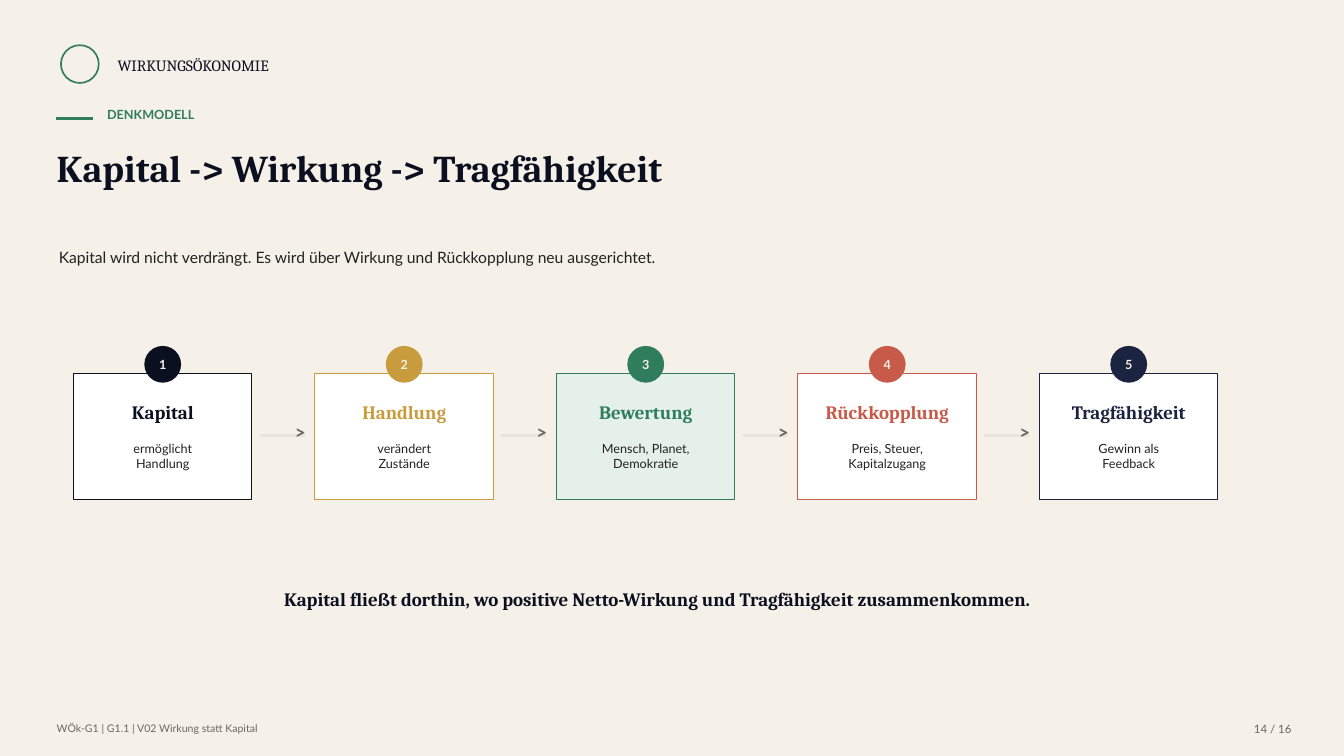
"""Build the slide "Kapital -> Wirkung -> Tragfähigkeit" and save it."""
from pptx import Presentation
from pptx.dml.color import RGBColor
from pptx.enum.shapes import MSO_SHAPE as Shape
from pptx.enum.text import MSO_ANCHOR as Anchor, MSO_AUTO_SIZE as AutoSize, PP_ALIGN as Align
from pptx.util import Pt

PX = 9525
SERIF, SANS = "Cambria", "Lato"
CREAM = RGBColor(0xF6, 0xF1, 0xE8)
WHITE = RGBColor(0xFF, 0xFF, 0xFF)
INK = RGBColor(0x0B, 0x10, 0x20)
NAVY = RGBColor(0x1A, 0x24, 0x40)
GOLD = RGBColor(0xC8, 0x9B, 0x3C)
GREEN = RGBColor(0x2F, 0x7D, 0x5C)
MINT = RGBColor(0xE5, 0xF0, 0xEA)
RED = RGBColor(0xC8, 0x5A, 0x4A)
TEXT = RGBColor(0x22, 0x22, 0x22)
MUTED = RGBColor(0x6C, 0x65, 0x5B)
RULE = RGBColor(0xE8, 0xE4, 0xDC)

TITLE = "Kapital -> Wirkung -> Tragfähigkeit"
LABELS = [
    ("WIRKUNGSÖKONOMIE", (112, 53, 250, 22), dict(size=11.2, font=SERIF, color=INK)),
    ("DENKMODELL", (102, 102, 420, 24), dict(size=9, color=GREEN, bold=True)),
    ("Kapital wird nicht verdrängt. Es wird über Wirkung und Rückkopplung neu ausgerichtet.",
     (56, 236, 820, 44), dict(size=11.2)),
    ("Kapital fließt dorthin, wo positive Netto-Wirkung und Tragfähigkeit zusammenkommen.",
     (246, 560, 760, 42),
     dict(size=13.5, font=SERIF, color=INK, bold=True, align=Align.CENTER)),
    ("WÖk-G1 | G1.1 | V02 Wirkung statt Kapital", (54, 688, 560, 18),
     dict(size=7.5, color=MUTED)),
    ("14 / 16", (1160, 688, 70, 18), dict(size=8.2, color=MUTED, align=Align.RIGHT)),
]
STEPS = [
    ("Kapital", "ermöglicht\nHandlung", INK, WHITE),
    ("Handlung", "verändert\nZustände", GOLD, WHITE),
    ("Bewertung", "Mensch, Planet,\nDemokratie", GREEN, MINT),
    ("Rückkopplung", "Preis, Steuer,\nKapitalzugang", RED, WHITE),
    ("Tragfähigkeit", "Gewinn als\nFeedback", NAVY, WHITE),
]
LEFT, TOP, CARD_W, CARD_H, STEP = 70, 356, 170, 120, 230
BADGE = 34


def emu(box):
    return [v * PX for v in box]


def write(sp, text, size=9, font=SANS, color=TEXT, bold=False, align=Align.LEFT,
          anchor=Anchor.TOP):
    tf = sp.text_frame
    tf.text = text
    tf.word_wrap = True
    tf.auto_size = AutoSize.NONE
    tf.vertical_anchor = anchor
    tf.margin_left = tf.margin_right = tf.margin_top = tf.margin_bottom = 0
    for p in tf.paragraphs:
        p.alignment = align
        for r in p.runs:
            r.font.size, r.font.name, r.font.bold = Pt(size), font, bold
            r.font.color.rgb = color


def label(s, text, box, **style):
    write(s.shapes.add_textbox(*emu(box)), text, **style)


def shape(s, kind, box, fill, line, width=0.75):
    sp = s.shapes.add_shape(kind, *emu(box))
    sp.shadow.inherit = False
    if fill is None:
        sp.fill.background()
    else:
        sp.fill.solid()
        sp.fill.fore_color.rgb = fill
    sp.line.color.rgb = line
    sp.line.width = Pt(width)
    return sp


def step_card(s, i, name, detail, color, fill):
    x = LEFT + i * STEP
    shape(s, Shape.RECTANGLE, (x, TOP, CARD_W, CARD_H), fill, color)
    badge = shape(s, Shape.OVAL, (x + (CARD_W - BADGE) // 2, TOP - 26, BADGE, BADGE),
                  color, color)
    write(badge, str(i + 1), color=CREAM, bold=True, align=Align.CENTER,
          anchor=Anchor.MIDDLE)
    label(s, name, (x + 14, TOP + 26, CARD_W - 28, 22), size=13.5, font=SERIF,
          color=color, bold=True, align=Align.CENTER)
    label(s, detail, (x + 18, TOP + 64, CARD_W - 36, 34), align=Align.CENTER)
    if i < len(STEPS) - 1:
        shape(s, Shape.RECTANGLE, (x + CARD_W + 8, TOP + 58, 42, 2), RULE, RULE, 0)
        label(s, ">", (x + CARD_W + 34, TOP + 45, 24, 24), size=13.5, color=MUTED,
              bold=True, align=Align.CENTER)


def main():
    prs = Presentation()
    prs.slide_width, prs.slide_height = emu((1280, 720))
    s = prs.slides.add_slide(prs.slide_layouts[5])
    s.background.fill.solid()
    s.background.fill.fore_color.rgb = CREAM

    title = s.shapes.title
    title.left, title.top, title.width, title.height = emu((54, 138, 920, 88))
    write(title, TITLE, size=27, font=SERIF, color=INK, bold=True)

    shape(s, Shape.OVAL, (58, 43, 36, 36), None, GREEN, 1.2)
    shape(s, Shape.RECTANGLE, (54, 112, 34, 2), GREEN, GREEN, 0)
    for text, box, style in LABELS:
        label(s, text, box, **style)
    for i, step in enumerate(STEPS):
        step_card(s, i, *step)
    prs.save("out.pptx")


if __name__ == "__main__":
    main()
